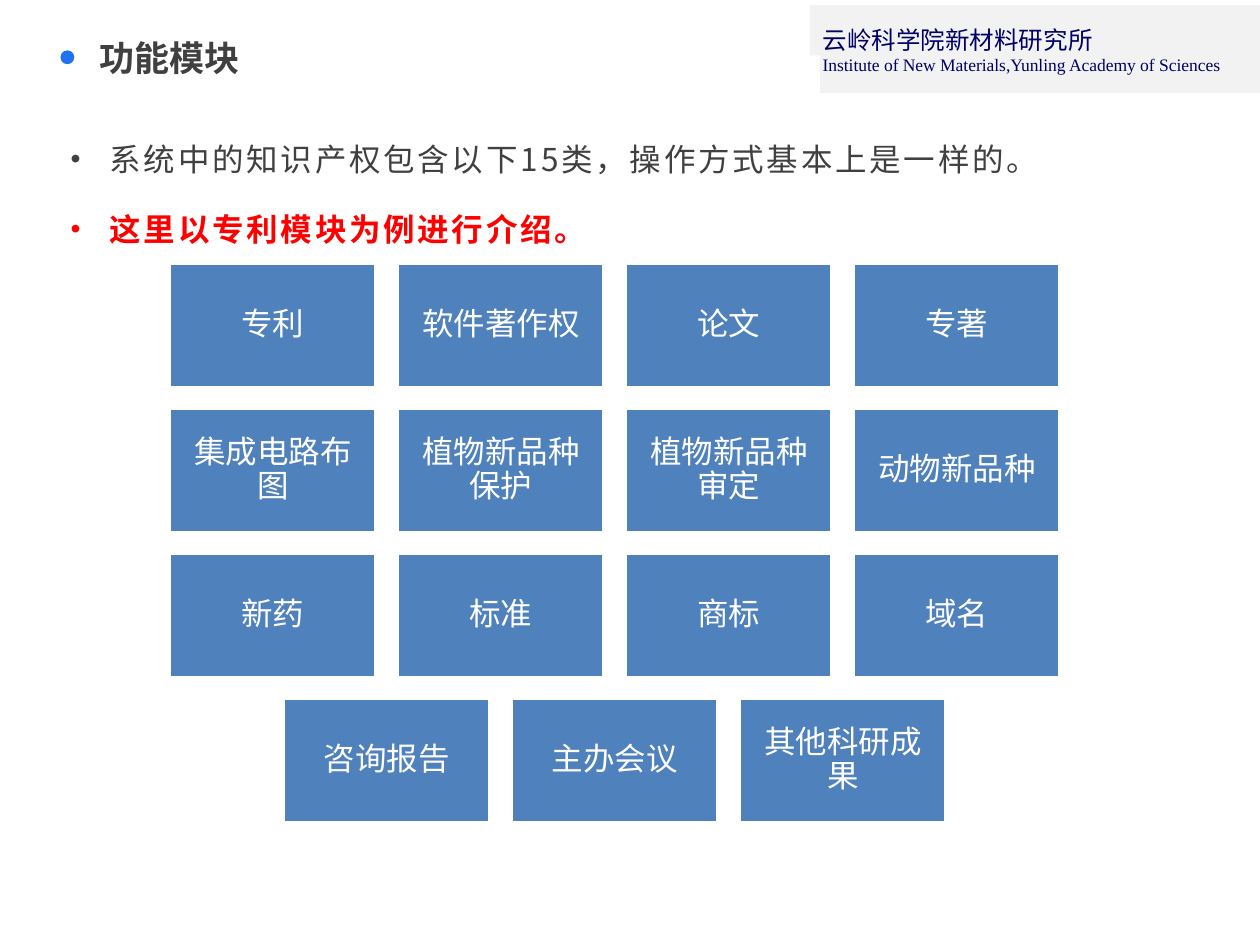
"""Build the slide that lists the fifteen intellectual property modules."""
from dataclasses import dataclass

from lxml import etree
from pptx import Presentation
from pptx.dml.color import RGBColor
from pptx.enum.shapes import MSO_SHAPE
from pptx.enum.text import MSO_ANCHOR, MSO_AUTO_SIZE, PP_ALIGN
from pptx.oxml.ns import qn
from pptx.util import Inches, Pt

RECTANGLE, OVAL = MSO_SHAPE.RECTANGLE, MSO_SHAPE.OVAL
MIDDLE, TOP = MSO_ANCHOR.MIDDLE, MSO_ANCHOR.TOP
LEFT, CENTER = PP_ALIGN.LEFT, PP_ALIGN.CENTER
NO_AUTOFIT = MSO_AUTO_SIZE.NONE


@dataclass(frozen=True)
class Theme:
    sans: str = "Noto Sans CJK SC"
    serif: str = "Times New Roman"
    ink: str = "404040"
    accent: str = "FF0000"
    navy: str = "000066"
    dot: str = "2073EE"
    band: str = "F2F2F2"
    tile: str = "4F81BD"
    white: str = "FFFFFF"
    title_size: int = 20
    body_size: int = 18
    institute_size: int = 14
    english_size: int = 10


theme = Theme()


def style(paragraph, face, size, color, bold=False):
    font = paragraph.font
    font.name, font.size, font.bold = face, Pt(size), bold
    font.color.rgb = RGBColor.from_string(color)
    properties = paragraph._p.pPr.find(qn("a:defRPr"))
    east_asian = etree.Element(qn("a:ea"), typeface=theme.sans)
    properties.find(qn("a:latin")).addnext(east_asian)
    return properties


def add_block(kind, left, top, width, height, color):
    block = slide.shapes.add_shape(
        kind, Inches(left), Inches(top), Inches(width), Inches(height))
    block.shadow.inherit = False
    block.fill.solid()
    block.fill.fore_color.rgb = RGBColor.from_string(color)
    block.line.fill.background()
    return block


deck = Presentation()
deck.slide_width, deck.slide_height = Inches(10), Inches(7.5)
slide = deck.slides.add_slide(deck.slide_layouts[1])

add_block(OVAL, 0.48, 0.4, 0.11, 0.11, theme.dot)
add_block(RECTANGLE, 6.43, 0.04, 3.57, 0.4, theme.band)
add_block(RECTANGLE, 6.51, 0.34, 3.49, 0.4, theme.band)

institute = slide.shapes.add_textbox(
    Inches(6.43), Inches(0.15), Inches(3.62), Inches(0.5)).text_frame
institute.word_wrap = False
institute.text = "云岭科学院新材料研究所\nInstitute of New Materials,Yunling Academy of Sciences"
for line, size in zip(institute.paragraphs, (theme.institute_size, theme.english_size)):
    style(line, theme.serif, size, theme.navy)

title = slide.shapes.title
title.left, title.top = Inches(0.69), Inches(0.12)
title.width, title.height = Inches(8.89), Inches(0.67)
title.text_frame.text = "功能模块"
title.text_frame.auto_size = NO_AUTOFIT
title.text_frame.vertical_anchor = MIDDLE
heading = title.text_frame.paragraphs[0]
heading.alignment = LEFT
style(heading, theme.sans, theme.title_size, theme.ink, bold=True)

intro = slide.placeholders[1]
intro.left, intro.top = Inches(0.46), Inches(0.97)
intro.width, intro.height = Inches(9.09), Inches(1.06)
intro.text_frame.text = "系统中的知识产权包含以下15类，操作方式基本上是一样的。\n这里以专利模块为例进行介绍。"
intro.text_frame.auto_size = NO_AUTOFIT
intro.text_frame.vertical_anchor = TOP
intro_looks = ((0, theme.ink, False), (12, theme.accent, True))
for point, (gap, color, bold) in zip(intro.text_frame.paragraphs, intro_looks):
    point.line_spacing = 1.3
    point.space_before = Pt(gap)
    point.space_after = Pt(0)
    indents = point._p.get_or_add_pPr()
    indents.set("marL", str(Inches(0.31)))
    indents.set("indent", str(-Inches(0.31)))
    etree.SubElement(indents, qn("a:buSzPct"), val="90000")
    etree.SubElement(indents, qn("a:buFont"), typeface="Arial")
    etree.SubElement(indents, qn("a:buChar"), char="•")
    style(point, theme.sans, theme.body_size, color, bold).set("spc", "160")

module_rows = (
    ("专利", "软件著作权", "论文", "专著"),
    ("集成电路布图", "植物新品种保护", "植物新品种审定", "动物新品种"),
    ("新药", "标准", "商标", "域名"),
    ("咨询报告", "主办会议", "其他科研成果"),
)
grid_center, grid_top = 4.88, 2.09
tile_width, tile_height = 1.64, 0.99
column_step, row_step = 1.81, 1.15

for row, modules in enumerate(module_rows):
    row_width = (len(modules) - 1) * column_step + tile_width
    row_left = grid_center - row_width / 2
    for column, module in enumerate(modules):
        tile = add_block(RECTANGLE, row_left + column * column_step,
                         grid_top + row * row_step, tile_width, tile_height, theme.tile)
        tile.line.color.rgb = RGBColor.from_string(theme.white)
        tile.line.width = Pt(2)
        label = tile.text_frame
        label.word_wrap = True
        label.vertical_anchor = MIDDLE
        label.margin_left = label.margin_right = Inches(0.1)
        label.margin_top = label.margin_bottom = Inches(0.07)
        label.text = module
        caption = label.paragraphs[0]
        caption.alignment = CENTER
        caption.line_spacing = 0.9
        style(caption, theme.sans, theme.body_size, theme.white)

deck.save("out.pptx")
